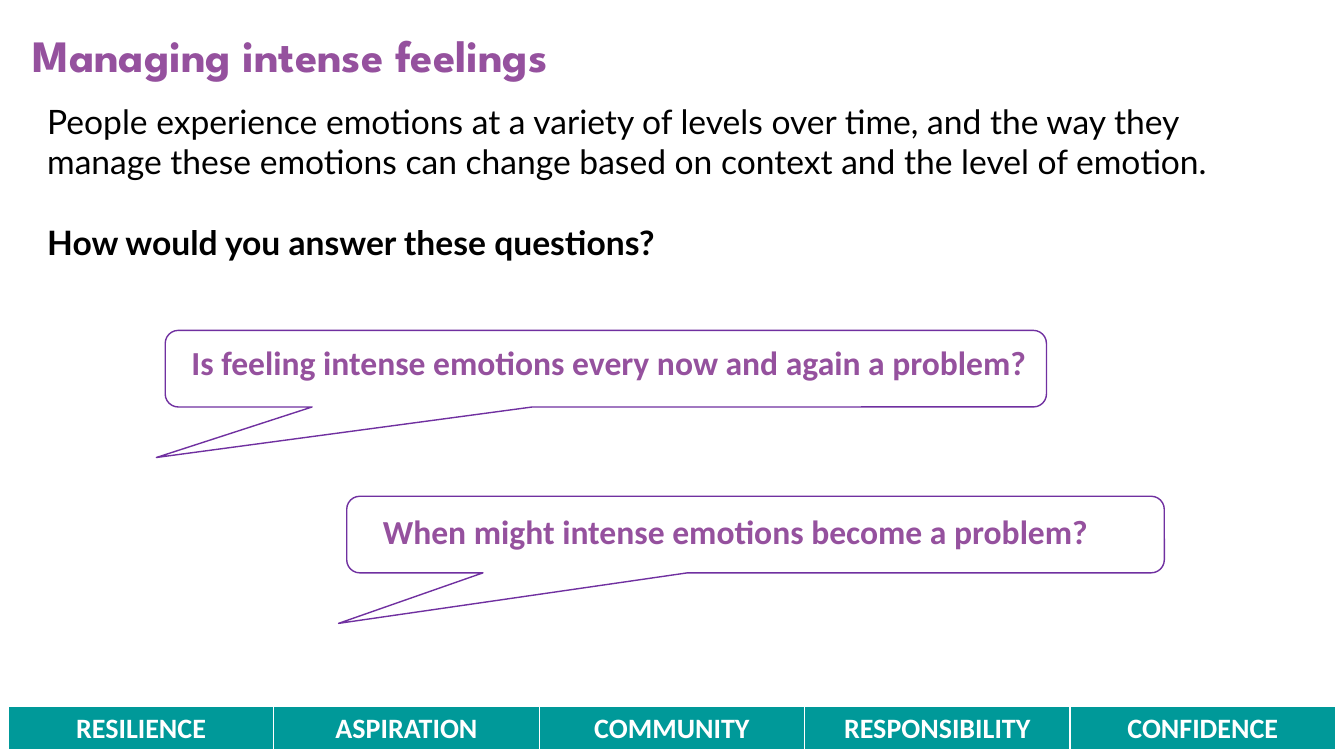
import pptx
import pptx.util
import pptx.dml.color
import pptx.enum.shapes
import pptx.enum.text
import pptx.oxml
import pptx.oxml.ns

Pt = pptx.util.Pt
PURPLE, OUTLINE, TEAL, WHITE, BLACK = "95519E", "7030A0", "009999", "FFFFFF", "000000"

TITLE = "Managing intense feelings"
INTRO = [
    ("People experience emotions at a variety of levels over time, and the way they "
     "manage these emotions can change based on context and the level of emotion.", False),
    ("How would you answer these questions?", True),
]
# question, text box, callout (left, top, width, height)
QUESTIONS = [
    ("Is feeling intense emotions every now and again a problem?",
     (129.6, 240.5, 641, 36), (118, 236, 629.5, 54.7)),
    ("When might intense emotions become a problem?",
     (266.4, 361.4, 523.5, 36), (247.7, 354.5, 584, 54.7)),
]
CALLOUT_ADJ = (-0.51, 1.16, 0.17)
VALUES = ["RESILIENCE", "ASPIRATION", "COMMUNITY", "RESPONSIBILITY", "CONFIDENCE"]
VALUES_BOX = (6, 504.8, 948, 31.5)
BORDERS = {"lnL": 1, "lnR": 1, "lnT": 1, "lnB": 3}


def rgb(color):
    return pptx.dml.color.RGBColor.from_string(color)


def pts(box):
    return [Pt(v) for v in box]


def style(p, size, font, color, bold):
    for r in p.runs:
        r.font.size = Pt(size)
        r.font.name = font
        r.font.color.rgb = rgb(color)
        r.font.bold = bold


def add_text(s, box):
    tf = s.shapes.add_textbox(*pts(box)).text_frame
    tf.word_wrap = True
    return tf


def add_callout(s, box):
    kind = pptx.enum.shapes.MSO_SHAPE.ROUNDED_RECTANGULAR_CALLOUT
    sp = s.shapes.add_shape(kind, *pts(box))
    sp.shadow.inherit = False
    sp.fill.background()
    sp.line.color.rgb = rgb(OUTLINE)
    sp.line.width = Pt(1)
    for i, value in enumerate(CALLOUT_ADJ):
        sp.adjustments[i] = value


def add_borders(cell):
    tc_pr = cell._tc.get_or_add_tcPr()
    for tag, width in BORDERS.items():
        tc_pr.append(pptx.oxml.parse_xml(
            f'<a:{tag} {pptx.oxml.ns.nsdecls("a")} w="{Pt(width)}"><a:solidFill>'
            f'<a:srgbClr val="{WHITE}"/></a:solidFill></a:{tag}>'))


def add_values(s):
    table = s.shapes.add_table(1, len(VALUES), *pts(VALUES_BOX)).table
    for cell, value in zip(table.rows[0].cells, VALUES):
        add_borders(cell)
        cell.fill.solid()
        cell.fill.fore_color.rgb = rgb(TEAL)
        cell.text_frame.text = value
        p = cell.text_frame.paragraphs[0]
        p.alignment = pptx.enum.text.PP_ALIGN.CENTER
        style(p, 20, "Calibri", WHITE, True)


def main():
    prs = pptx.Presentation()
    prs.slide_width, prs.slide_height = Pt(960), Pt(540)
    s = prs.slides.add_slide(prs.slide_layouts[5])

    title = s.shapes.title
    title.left, title.top, title.width, title.height = pts((16, 16.5, 927, 46))
    tf = title.text_frame
    tf.text = TITLE
    tf.vertical_anchor = pptx.enum.text.MSO_ANCHOR.TOP
    tf.auto_size = pptx.enum.text.MSO_AUTO_SIZE.NONE
    tf.paragraphs[0].alignment = pptx.enum.text.PP_ALIGN.LEFT
    style(tf.paragraphs[0], 32, "League Spartan", PURPLE, True)

    tf = add_text(s, (26.6, 68.4, 882, 124))
    tf.text = "\n".join(text for text, _ in INTRO)
    for p, (_, bold) in zip(tf.paragraphs, INTRO):
        style(p, 24, "Lato", BLACK, bold)
    tf.paragraphs[1].space_before = Pt(28.8)

    for question, text_box, callout_box in QUESTIONS:
        add_callout(s, callout_box)
        tf = add_text(s, text_box)
        tf.text = question
        style(tf.paragraphs[0], 24, "Calibri", PURPLE, True)

    add_values(s)
    prs.save("out.pptx")


if __name__ == "__main__":
    main()
